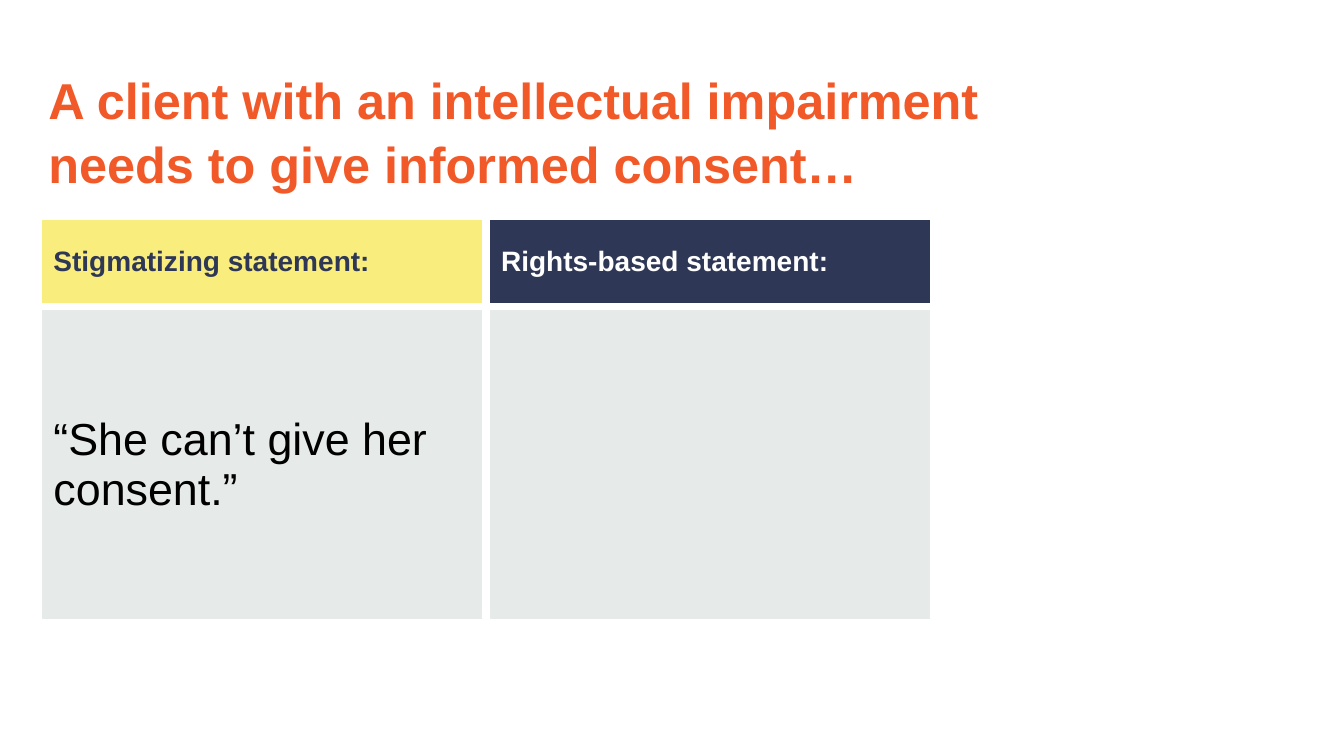
from dataclasses import dataclass

from lxml import etree
from pptx import Presentation
from pptx.dml.color import RGBColor
from pptx.enum import text
from pptx.oxml.ns import qn
from pptx.util import Inches, Pt


@dataclass(frozen=True)
class Theme:
    font: str = "Arial"
    orange: str = "F15928"
    navy: str = "2E3856"
    yellow: str = "F9ED7D"
    grey: str = "E6EBE9"
    white: str = "FFFFFF"
    black: str = "000000"
    title_size: int = 36
    header_size: int = 20
    body_size: int = 32
    border_width: int = 6


@dataclass(frozen=True)
class Cell:
    words: str
    fill: str
    color: str
    size: int
    bold: bool = False


THEME = Theme()
COLUMN_WIDTHS = (4.44, 4.44)
ROW_HEIGHTS = (0.89, 3.14)
STATEMENTS = (
    (
        Cell("Stigmatizing statement:", THEME.yellow, THEME.navy, THEME.header_size, True),
        Cell("Rights-based statement:", THEME.navy, THEME.white, THEME.header_size, True),
    ),
    (
        Cell("“She can’t give her consent.”", THEME.grey, THEME.black, THEME.body_size),
        Cell("", THEME.grey, THEME.black, THEME.body_size),
    ),
)


def set_all(target, values: dict) -> None:
    for name, value in values.items():
        setattr(target, name, value)


def insets(prefix: str, inches: float) -> dict:
    sides = ("left", "top", "right", "bottom")
    return {f"{prefix}{side}": Inches(inches) for side in sides}


def write(p, words: str, size: int, color: str, bold: bool) -> None:
    r = p.add_run()
    r.text = words
    set_all(r.font, {"name": THEME.font, "size": Pt(size), "bold": bold})
    r.font.color.rgb = RGBColor.from_string(color)


def add_borders(cell) -> None:
    """Put the borders ahead of the cell fill, as the schema requires."""
    tc_pr = cell._tc.get_or_add_tcPr()
    for index, side in enumerate(("lnL", "lnR", "lnT", "lnB")):
        line = etree.Element(qn(f"a:{side}"), w=str(Pt(THEME.border_width)))
        fill = etree.SubElement(line, qn("a:solidFill"))
        etree.SubElement(fill, qn("a:srgbClr"), val=THEME.white)
        tc_pr.insert(index, line)


def add_title(slide) -> None:
    sp = slide.shapes.title
    set_all(sp, {"left": Inches(0.38), "top": Inches(0.54),
                 "width": Inches(10.72), "height": Inches(1.45)})
    tf = sp.text_frame
    set_all(tf, {"word_wrap": True, "auto_size": text.MSO_AUTO_SIZE.NONE,
                 "vertical_anchor": text.MSO_ANCHOR.TOP, **insets("margin_", 0.1)})
    p = tf.paragraphs[0]
    set_all(p, {"alignment": text.PP_ALIGN.LEFT, "line_spacing": 1.07})
    write(p, "A client with an intellectual impairment needs to give informed consent…",
          THEME.title_size, THEME.orange, True)


def fill_cell(cell, content: Cell) -> None:
    cell.fill.solid()
    cell.fill.fore_color.rgb = RGBColor.from_string(content.fill)
    set_all(cell, {"vertical_anchor": text.MSO_ANCHOR.MIDDLE, **insets("margin_", 0.15)})
    add_borders(cell)
    if content.words:
        write(cell.text_frame.paragraphs[0], content.words,
              content.size, content.color, content.bold)


def add_statements(slide) -> None:
    table = slide.shapes.add_table(
        len(ROW_HEIGHTS), len(COLUMN_WIDTHS), Inches(0.38), Inches(2.15),
        Inches(sum(COLUMN_WIDTHS)), Inches(sum(ROW_HEIGHTS))).table
    set_all(table, {"first_row": False, "horz_banding": False})
    for column, width in zip(table.columns, COLUMN_WIDTHS):
        column.width = Inches(width)
    for row, height, contents in zip(table.rows, ROW_HEIGHTS, STATEMENTS):
        row.height = Inches(height)
        for cell, content in zip(row.cells, contents):
            fill_cell(cell, content)


def main() -> None:
    prs = Presentation()
    set_all(prs, {"slide_width": Inches(13.33), "slide_height": Inches(7.5)})
    slide = prs.slides.add_slide(prs.slide_layouts[5])
    add_title(slide)
    add_statements(slide)
    prs.save("out.pptx")


if __name__ == "__main__":
    main()
